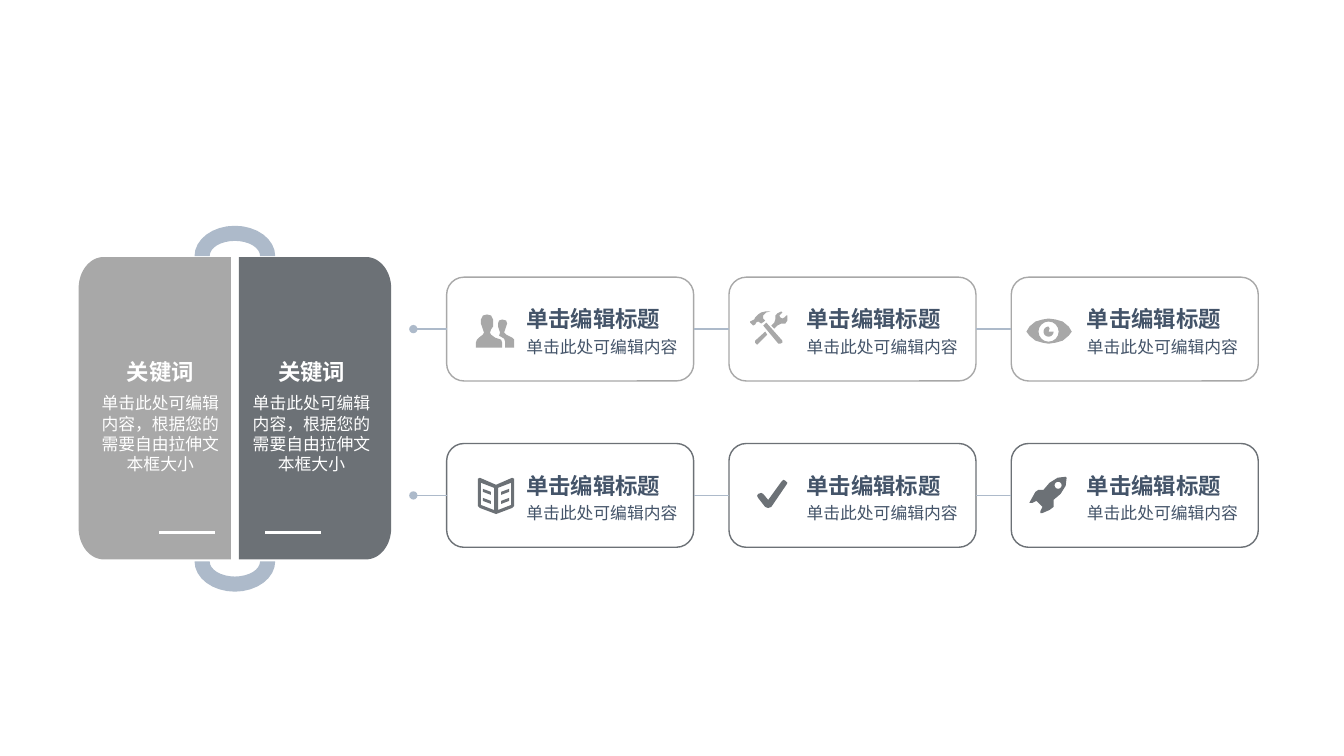
from math import cos, radians, sin

from lxml import etree
from pptx import Presentation
from pptx.dml.color import RGBColor
from pptx.enum.shapes import MSO_CONNECTOR, MSO_SHAPE
from pptx.enum.text import MSO_AUTO_SIZE, PP_ALIGN
from pptx.oxml.ns import qn
from pptx.util import Inches, Pt

STRAIGHT = MSO_CONNECTOR.STRAIGHT
ROUNDED = MSO_SHAPE.ROUNDED_RECTANGLE
FIT = MSO_AUTO_SIZE.SHAPE_TO_FIT_TEXT
LEFT, CENTER = PP_ALIGN.LEFT, PP_ALIGN.CENTER
LEFT_SIDE, RIGHT_SIDE = 1, 3

THEME = {
    "font": "Arial", "heading": 16, "body": 12, "thin": 1, "thick": 2.25,
    "light": RGBColor.from_string("A8A8A8"),
    "dark": RGBColor.from_string("6C7176"),
    "accent": RGBColor.from_string("ADBACA"),
    "ink": RGBColor.from_string("445469"),
    "white": RGBColor.from_string("FFFFFF"),
}


def arc(cx, cy, rx, ry, start=0, end=360, steps=16):
    """Points on an ellipse, angles in degrees and clockwise from the right."""
    angles = [radians(start + (end - start) * i / steps) for i in range(steps + 1)]
    return [(cx + rx * cos(a), cy + ry * sin(a)) for a in angles]


# Icon outlines are in hundredths of an inch from the icon's corner.
PEOPLE = [
    [(26, 33), (26, 28), (25, 25), (19, 23), (15, 20), (14, 18), (15, 15), (17, 12),
     (17, 9), (17, 5), (15, 1), (11, 0), (7, 1), (5, 5), (5, 9), (6, 12), (7, 15),
     (8, 18), (7, 20), (3, 23), (1, 25), (0, 28), (0, 33)],
    [(38, 33), (38, 25), (36, 23), (30, 20), (28, 18), (29, 15), (30, 12), (31, 9),
     (30, 6), (26, 5), (23, 6), (22, 9), (22, 12), (23, 15), (24, 18), (23, 21),
     (28, 24), (29, 27), (29, 33)],
]
TOOLS = [
    [(6, 11), (8, 10), (11, 12), (14, 10), (15, 9), (13, 7), (13, 4), (16, 1), (20, 0),
     (15, 0), (11, 1), (8, 3), (5, 6), (4, 8), (2, 9), (0, 10), (0, 11), (3, 14),
     (5, 13)],
    [(16, 11), (13, 14), (28, 32), (30, 32), (32, 31), (32, 29)],
    [(37, 4), (36, 4), (34, 6), (32, 7), (30, 6), (29, 4), (32, 1), (31, 0), (27, 2),
     (25, 4), (25, 8), (24, 11), (21, 14), (24, 17), (27, 14), (31, 12), (35, 12),
     (37, 9)],
    [(5, 29), (5, 31), (7, 33), (8, 32), (17, 23), (15, 20)],
]
EYE = [
    [(0, 13), (3, 8), (9, 3), (16, 1), (22, 0), (29, 1), (36, 3), (42, 8), (45, 13),
     (42, 17), (36, 22), (29, 24), (22, 25), (16, 24), (9, 22), (3, 17)],
    arc(22, 13, 10, 10),
    arc(22, 13, 5, 5, 0, 270) + [(23, 10), (22, 13)],
]
BOOK = [
    [(0, 1), (2, 0), (18, 7), (34, 0), (36, 1), (36, 28), (34, 30), (18, 36), (2, 30),
     (0, 28)],
    [(16, 32), (3, 27), (3, 5), (16, 10)],
    [(33, 27), (20, 32), (20, 10), (33, 5)],
    *[[(x, y), (x + 8 * slope, y + 3), (x + 8 * slope, y + 6), (x, y + 3)]
      for x, slope in ((5, 1), (31, -1)) for y in (11, 20)],
]
CHECK = [
    [(11, 28), (8, 27), (1, 18), (0, 16), (1, 14), (4, 13), (6, 14), (11, 20), (24, 2),
     (26, 0), (28, 1), (30, 3), (29, 5), (14, 27)],
]
ROCKET = [
    [(24, 25), (31, 19), (36, 11), (37, 3), (36, 2), (28, 3), (20, 8), (14, 15),
     (9, 15), (6, 17), (1, 26), (0, 28), (3, 28), (7, 26), (13, 32), (11, 36),
     (11, 38), (13, 38), (20, 35), (24, 32)],
    arc(28.5, 10.5, 3.5, 3.5),
]

PROMPT = ("单击编辑标题", "单击此处可编辑内容")
STEP_ROWS = [  # colour, then (icon, icon left, icon top) of each step
    ("light", [(PEOPLE, 4.72, 3.12), (TOOLS, 7.44, 3.09), (EYE, 10.18, 3.16)]),
    ("dark", [(BOOK, 4.74, 4.74), (CHECK, 7.51, 4.76), (ROCKET, 10.21, 4.71)]),
]
KEYWORD = ("关键词", "单击此处可编辑内容，根据您的需要自由拉伸文本框大小")
PANELS = [  # colour, side of the spine, left of the short rule
    ("light", -1, 1.58),
    ("dark", 1, 2.63),
]

SPINE, HALF_GAP, HALF_WIDTH = 2.33, 0.04, 1.55
PANEL_TOP, PANEL_BOTTOM = 2.55, 5.55
CORNER_X, CORNER_Y = 0.25, 0.31
KEYWORD_LEFT, KEYWORD_STEP, KEYWORD_WIDTH = 0.97, 1.5, 1.24
STEP_LEFT, STEP_TOP, STEP_W, STEP_H = 4.43, 2.75, 2.45, 1.03
COLUMN_STEP, ROW_STEP = 2.8, 1.65
TEXT_LEFT, TEXT_STEP = 5.22, 2.78

prs = Presentation()
prs.slide_width, prs.slide_height = Inches(13.33), Inches(7.5)
shapes = prs.slides.add_slide(prs.slide_layouts[6]).shapes


def add_outline(contours, color):
    (first, *others) = [[(Inches(x), Inches(y)) for x, y in c] for c in contours]
    builder = shapes.build_freeform(*first[0])
    builder.add_line_segments(first[1:])
    for contour in others:
        builder.move_to(*contour[0])
        builder.add_line_segments(contour[1:])
    outline = builder.convert_to_shape()
    outline.shadow.inherit = False
    outline.fill.solid()
    outline.fill.fore_color.rgb = THEME[color]
    outline.line.fill.background()


def add_rule(x1, y1, x2, y2, color, weight):
    rule = shapes.add_connector(STRAIGHT, *map(Inches, (x1, y1, x2, y2)))
    rule.line.color.rgb = THEME[color]
    rule.line.width = Pt(THEME[weight])
    etree.SubElement(rule.line._get_or_add_ln().getparent(), qn("a:effectLst"))
    return rule


def add_label(text, x, y, w, h, style, color, align=LEFT):
    frame = shapes.add_textbox(*map(Inches, (x, y, w, h))).text_frame
    frame_format = {"word_wrap": True, "auto_size": FIT, "margin_left": 0,
                    "margin_right": 0, "margin_top": 0, "margin_bottom": 0}
    for name, value in frame_format.items():
        setattr(frame, name, value)
    paragraph = frame.paragraphs[0]
    paragraph.alignment = align
    run = paragraph.add_run()
    run.text = text
    run_format = {"name": THEME["font"], "size": Pt(THEME[style]),
                  "bold": style == "heading"}
    for name, value in run_format.items():
        setattr(run.font, name, value)
    run.font.color.rgb = THEME[color]


def add_step_card(x, y, color):
    card = shapes.add_shape(ROUNDED, *map(Inches, (x, y, STEP_W, STEP_H)))
    card.shadow.inherit = False
    card.fill.background()
    card.line.color.rgb = THEME[color]
    card.line.width = Pt(THEME["thin"])
    return card


def add_panel(color, side):
    corner = HALF_WIDTH - CORNER_X
    half = [(HALF_GAP, PANEL_TOP),
            *arc(corner, PANEL_TOP + CORNER_Y, CORNER_X, CORNER_Y, -90, 0),
            *arc(corner, PANEL_BOTTOM - CORNER_Y, CORNER_X, CORNER_Y, 0, 90),
            (HALF_GAP, PANEL_BOTTOM)]
    add_outline([[(SPINE + side * x, y) for x, y in half]], color)


for color, side, rule_left in PANELS:
    add_panel(color, side)
    add_rule(rule_left, 5.28, rule_left + 0.55, 5.28, "white", "thick")

for ring_y, turn in ((2.54, 180), (5.57, 0)):
    add_outline([arc(SPINE, ring_y, 0.4, 0.3, turn, turn + 180)
                 + arc(SPINE, ring_y, 0.25, 0.15, turn + 180, turn)], "accent")

for i in range(len(PANELS)):
    x = KEYWORD_LEFT + i * KEYWORD_STEP
    for text, y, h, style in zip(KEYWORD, (3.55, 3.9), (0.27, 0.81), ("heading", "body")):
        add_label(text, x, y, KEYWORD_WIDTH, h, style, "white", CENTER)

for row, (color, steps) in enumerate(STEP_ROWS):
    top = STEP_TOP + row * ROW_STEP
    middle = top + STEP_H / 2
    previous = None
    for column, (icon, icon_left, icon_top) in enumerate(steps):
        left = STEP_LEFT + column * COLUMN_STEP
        card = add_step_card(left, top, color)
        link = add_rule(left, middle, left - 0.33, middle, "accent", "thin")
        link.begin_connect(card, LEFT_SIDE)
        if previous:
            link.end_connect(previous, RIGHT_SIDE)
        else:
            etree.SubElement(link.line._get_or_add_ln(), qn("a:tailEnd"), type="oval")
        previous = card
        add_outline([[(icon_left + x / 100, icon_top + y / 100) for x, y in contour]
                     for contour in icon], color)
        text_left = TEXT_LEFT + column * TEXT_STEP
        title, detail = PROMPT
        add_label(title, text_left, top + 0.28, 1.51, 0.27, "heading", "ink")
        add_label(detail, text_left, top + 0.59, 1.71, 0.2, "body", "ink")

prs.save("out.pptx")
